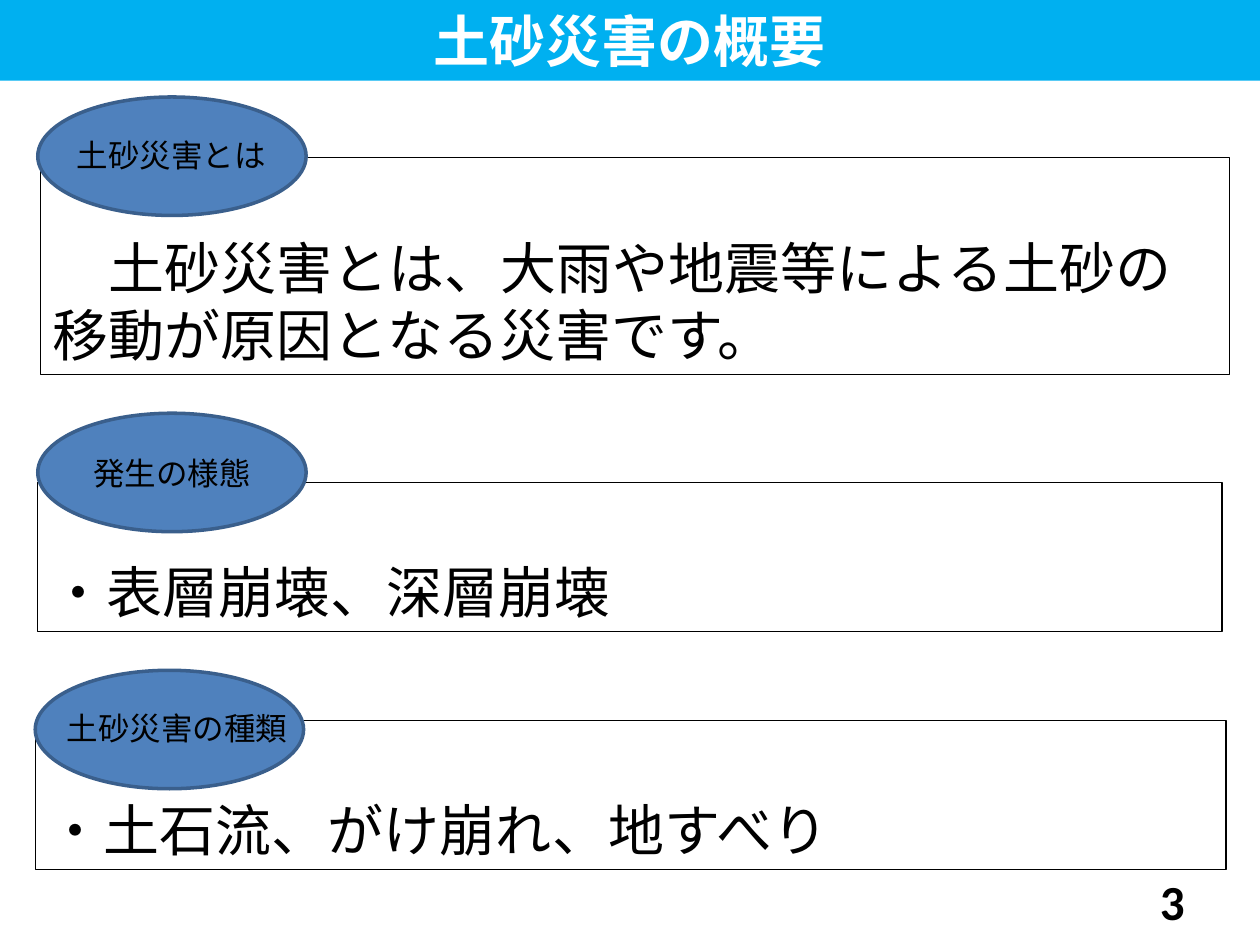
"""Build the overview slide on sediment disasters."""
from dataclasses import dataclass

import pptx
import pptx.dml.color
import pptx.enum.shapes
import pptx.enum.text
import pptx.oxml.ns
import pptx.util
from lxml import etree

Inches = pptx.util.Inches
Pt = pptx.util.Pt
Align = pptx.enum.text.PP_ALIGN
Anchor = pptx.enum.text.MSO_ANCHOR
Kind = pptx.enum.shapes.MSO_SHAPE


@dataclass(frozen=True)
class Theme:
    banner: str = "00B0F0"
    oval: str = "4F81BD"
    oval_line: str = "3A5F8C"
    ink: str = "000000"
    paper: str = "FFFFFF"
    body_font: str = "Calibri"
    title_font: str = "Noto Sans CJK JP"
    body_size: int = 32
    label_size: int = 18
    number_size: int = 28


theme = Theme()
color = pptx.dml.color.RGBColor.from_string


def add_block(kind, place, fill=None, line=None, width=0.75):
    lengths = [Inches(value) for value in place]
    if kind is None:
        return page.shapes.add_textbox(*lengths)
    block = page.shapes.add_shape(kind, *lengths)
    block.shadow.inherit = False
    if fill:
        block.fill.solid()
        block.fill.fore_color.rgb = color(fill)
    else:
        block.fill.background()
    if line:
        block.line.color.rgb = color(line)
        block.line.width = Pt(width)
    else:
        block.line.fill.background()
    return block


def write(block, text, size, align=Align.LEFT, anchor=Anchor.MIDDLE,
          tint=theme.ink, font=theme.body_font, bold=False, wrap=True):
    frame = block.text_frame
    frame.word_wrap = wrap
    frame.vertical_anchor = anchor
    para = frame.paragraphs[0]
    para.text = text
    para.alignment = align
    para.font.size = Pt(size)
    para.font.bold = bold
    para.font.name = font
    para.font.color.rgb = color(tint)
    for span in para.runs:
        east_asian = etree.SubElement(span.font._element, pptx.oxml.ns.qn("a:ea"))
        east_asian.set("typeface", font)
    return para


deck = pptx.Presentation()
deck.slide_width = Inches(10)
deck.slide_height = Inches(7.5)
page = deck.slides.add_slide(deck.slide_layouts[6])

banner = add_block(Kind.RECTANGLE, (0, 0, 10, 0.64), theme.banner)
write(banner, "土砂災害の概要", theme.body_size, Align.CENTER,
      tint=theme.paper, font=theme.title_font, bold=True)

sections = [
    ("土砂災害とは", "土砂災害とは、大雨や地震等による土砂の移動が原因となる災害です。",
     (0.32, 1.25, 9.44, 1.72), (0.3, 0.77), (0.51, 1.03, 1.98, 0.4), theme.body_size),
    ("発生の様態", "・表層崩壊、深層崩壊",
     (0.3, 3.83, 9.4, 1.18), (0.3, 3.28), None, 0),
    ("土砂災害の種類", "・土石流、がけ崩れ、地すべり",
     (0.28, 5.72, 9.45, 1.18), (0.28, 5.32), (0.43, 5.58, 2.4, 0.4), 0),
]
for heading, body, panel_place, oval_corner, label_place, indent in sections:
    panel = add_block(Kind.RECTANGLE, panel_place, line=theme.ink)
    para = write(panel, body, theme.body_size, anchor=Anchor.BOTTOM)
    if indent:
        para._p.get_or_add_pPr().set("indent", str(Pt(indent)))
    oval = add_block(Kind.OVAL, (*oval_corner, 2.13, 0.94),
                     theme.oval, theme.oval_line, 2)
    if label_place:
        label = add_block(None, label_place)
        write(label, heading, theme.label_size, anchor=Anchor.TOP)
    else:
        write(oval, heading, theme.label_size, Align.CENTER)

number = add_block(None, (7.17, 6.95, 2.33, 0.4))
write(number, "3", theme.number_size, Align.RIGHT, bold=True)

deck.save("out.pptx")
